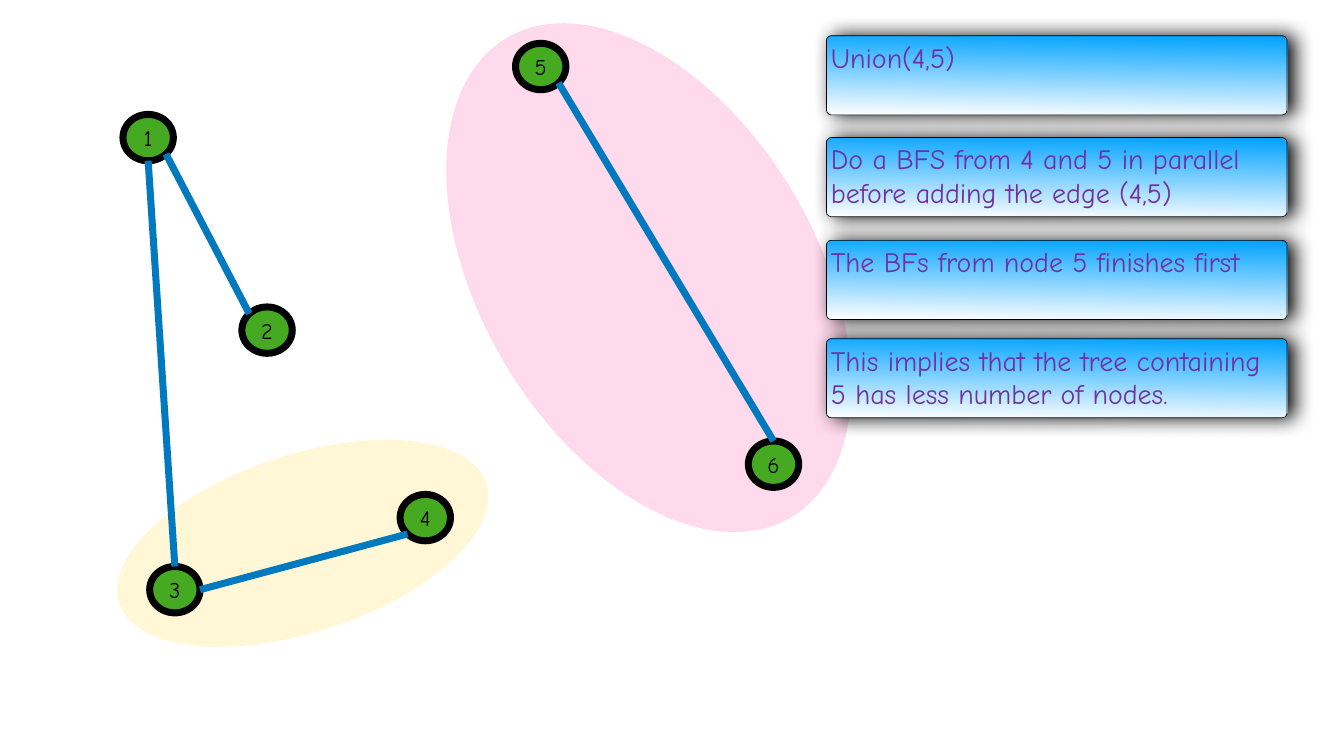
import math
from lxml import etree
from pptx import Presentation
from pptx import util as u
from pptx.dml.color import RGBColor
from pptx.enum import shapes, text
from pptx.oxml import parse_xml
from pptx.oxml.ns import nsdecls, qn

PX = 9144
FONT = "Comic Neue"
BLACK = RGBColor(0, 0, 0)
WHITE = RGBColor(255, 255, 255)
GREEN = RGBColor(0x45, 0xAA, 0x21)
EDGE_BLUE = RGBColor(0x00, 0x79, 0xBF)
SKY = RGBColor(0x00, 0xA2, 0xFF)
PURPLE = RGBColor(0x70, 0x30, 0xA0)
PINK = RGBColor(0xFF, 0xD9, 0xEC)
CREAM = RGBColor(0xFF, 0xF7, 0xD6)

TREES = [
    ((955, -2, 665, 1106), 329.3, PINK),
    ((218, 902, 766, 352), 341.9, CREAM),
]
NODE_W, NODE_H = 100, 92
NODES = {
    "1": (244, 227),
    "5": (1023, 86),
    "2": (480, 609),
    "3": (297, 1124),
    "4": (794, 981),
    "6": (1485, 875),
}
EDGES = [
    (("5", 45), ("6", 270)),
    (("2", 225), ("1", 45)),
    (("3", 270), ("1", 90)),
    (("3", 0), ("4", 135)),
]
STEP_LEFT, STEP_W, STEP_H = 1640, 914, 157
STEPS = [
    (477, "The BFs from node 5 finishes first"),
    (273, "Do a BFS from 4 and 5 in parallel before adding the edge (4,5)"),
    (71, "Union(4,5)"),
    (672, "This implies that the tree containing 5 has less number of nodes."),
]
SHADOW = (
    f'<a:effectLst {nsdecls("a")}>'
    f'<a:outerShdw blurRad="{u.Pt(28)}" dist="{u.Pt(9)}" dir="0" rotWithShape="0">'
    '<a:srgbClr val="000000"><a:alpha val="97000"/></a:srgbClr>'
    '</a:outerShdw></a:effectLst>'
)


def add_shape(slide, kind, box):
    sp = slide.shapes.add_shape(kind, *(v * PX for v in box))
    sp.shadow.inherit = False
    return sp


def set_line(shape, color, width):
    shape.line.color.rgb = color
    shape.line.width = u.Pt(width)


def set_text(sp, words, size, color, align, anchor):
    tf = sp.text_frame
    tf.text = words
    tf.word_wrap = True
    tf.vertical_anchor = anchor
    tf.margin_left = tf.margin_right = tf.margin_top = tf.margin_bottom = 6 * PX
    p = tf.paragraphs[0]
    p.alignment = align
    font = p.runs[0].font
    font.size, font.name, font.color.rgb = u.Pt(size), FONT, color


def rim_point(name, degrees):
    left, top = NODES[name]
    angle = math.radians(degrees)
    x = left + NODE_W / 2 * (1 + math.cos(angle))
    y = top + NODE_H / 2 * (1 + math.sin(angle))
    return round(x * PX), round(y * PX)


def add_tree(slide, box, rotation, color):
    sp = add_shape(slide, shapes.MSO_SHAPE.OVAL, box)
    sp.rotation = rotation
    sp.fill.solid()
    sp.fill.fore_color.rgb = color
    sp.line.fill.background()


def add_node(slide, name, left, top):
    sp = add_shape(slide, shapes.MSO_SHAPE.OVAL, (left, top, NODE_W, NODE_H))
    sp.fill.solid()
    sp.fill.fore_color.rgb = GREEN
    set_line(sp, BLACK, 10)
    set_text(sp, name, 32, BLACK, text.PP_ALIGN.CENTER, text.MSO_ANCHOR.MIDDLE)
    sp.text_frame.word_wrap = False


def add_edge(slide, start, end):
    line = slide.shapes.add_connector(
        shapes.MSO_CONNECTOR.STRAIGHT, *rim_point(*start), *rim_point(*end))
    set_line(line, EDGE_BLUE, 10)
    etree.SubElement(line._element.spPr, qn("a:effectLst"))


def add_step(slide, top, words):
    sp = add_shape(slide, shapes.MSO_SHAPE.ROUNDED_RECTANGLE,
                   (STEP_LEFT, top, STEP_W, STEP_H))
    sp.adjustments[0] = 0.06
    sp.fill.gradient()
    sp.fill.gradient_angle = 269
    for stop, color in zip(sp.fill.gradient_stops, (SKY, WHITE)):
        stop.color.rgb = color
    set_line(sp, BLACK, 1)
    spPr = sp._element.spPr
    spPr.replace(spPr.find(qn("a:effectLst")), parse_xml(SHADOW))
    set_text(sp, words, 40, PURPLE, text.PP_ALIGN.LEFT, text.MSO_ANCHOR.TOP)


def main():
    prs = Presentation()
    prs.slide_width, prs.slide_height = 2667 * PX, 1500 * PX
    slide = prs.slides.add_slide(prs.slide_layouts[6])
    for tree in TREES:
        add_tree(slide, *tree)
    for name, (left, top) in NODES.items():
        add_node(slide, name, left, top)
    for edge in EDGES:
        add_edge(slide, *edge)
    for step in STEPS:
        add_step(slide, *step)
    prs.save("out.pptx")


if __name__ == "__main__":
    main()
